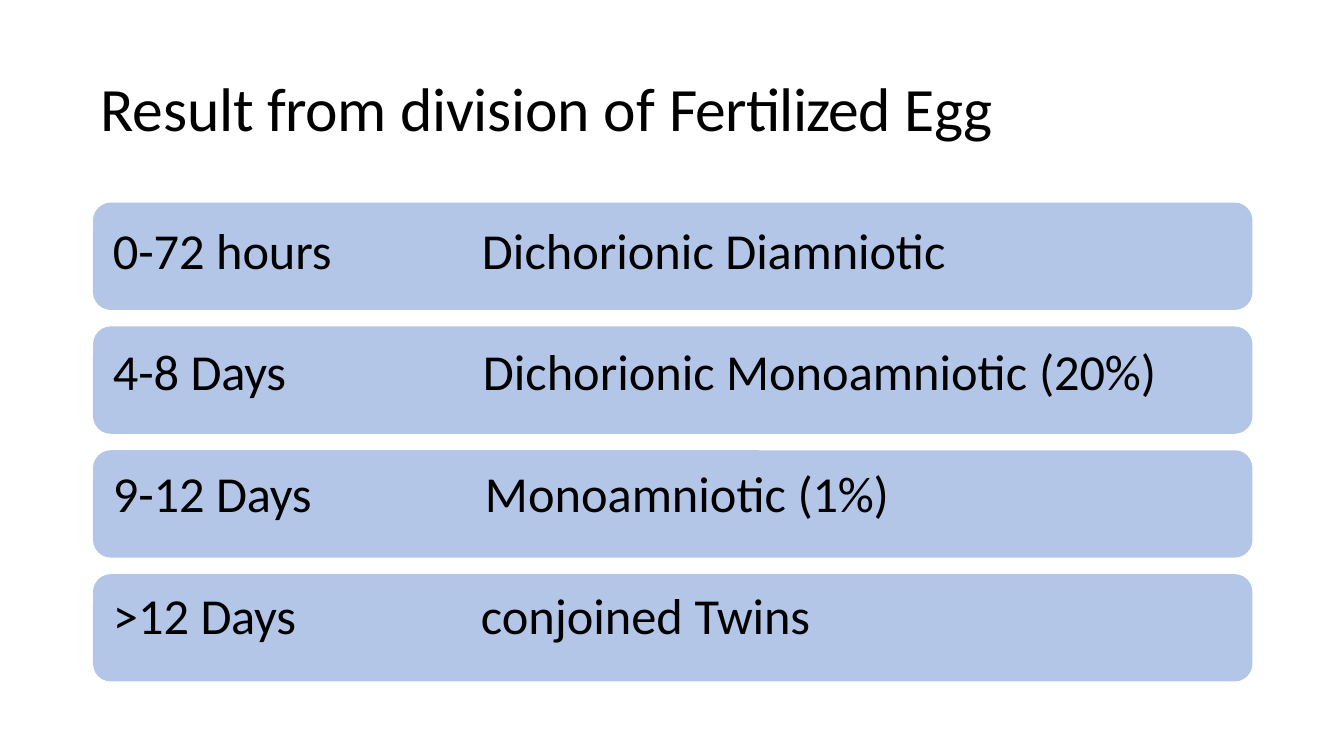
from dataclasses import dataclass

from lxml.etree import SubElement
from pptx import Presentation
from pptx.dml.color import RGBColor
from pptx.enum.shapes import MSO_SHAPE as Preset
from pptx.enum.text import MSO_ANCHOR as Anchor
from pptx.oxml.ns import qn
from pptx.util import Inches, Length, Pt

SLIDE_WIDTH, SLIDE_HEIGHT = Inches(13.33), Inches(7.5)


@dataclass(frozen=True)
class Theme:
    font: str = "Calibri"
    text: RGBColor = RGBColor(0x00, 0x00, 0x00)
    bar: RGBColor = RGBColor(0xB4, 0xC6, 0xE7)
    title_size: Length = Pt(44)
    row_size: Length = Pt(36)


@dataclass(frozen=True)
class Area:
    """Left, top, width and height in percent of the slide's size."""
    left: float
    top: float
    width: float
    height: float

    def lengths(self) -> tuple[int, int, int, int]:
        return (int(SLIDE_WIDTH * self.left / 100), int(SLIDE_HEIGHT * self.top / 100),
                int(SLIDE_WIDTH * self.width / 100), int(SLIDE_HEIGHT * self.height / 100))


@dataclass(frozen=True)
class Span:
    text: str
    spacing: float = 0  # points between letters


@dataclass(frozen=True)
class Stage:
    tab: float  # percent of the slide's width
    spans: tuple[Span, ...]


THEME = Theme()
TITLE_AREA = Area(7.5, 4.53, 81.47, 18.93)
FIRST_BAR = Area(6.92, 26.8, 86.27, 14.2)
BAR_PITCH = 16.38
STAGE_AREA = Area(8.33, 28.8, 77.87, 57.6)
STAGE_GAP = Pt(43.7)

TITLE = (Span("Result ", -0.2), Span("from ", -0.4), Span("division ", -0.2),
         Span("of "), Span("Fertilized ", -0.5), Span("Egg", -0.2))
STAGES = (
    Stage(27.46, (Span("0-", -0.1), Span("72 "), Span("hours", -0.1),
                  Span("\tDichorionic "), Span("Diamniotic", -0.1))),
    Stage(27.53, (Span("4-", -0.1), Span("8 "), Span("Days", -0.2),
                  Span("\tDichorionic Monoamniotic "), Span("(20%)", -0.1))),
    Stage(27.68, (Span("9-", -0.1), Span("12 "), Span("Days", -0.2),
                  Span("\tMonoamniotic "), Span("(1%)", -0.2))),
    Stage(27.38, (Span(">12 "), Span("Days", -0.2),
                  Span("\tconjoined "), Span("Twins", -0.1))),
)


def add_text_frame(slide, area: Area, top_inset: Length):
    frame = slide.shapes.add_textbox(*area.lengths()).text_frame
    frame.word_wrap = True
    frame.vertical_anchor = Anchor.TOP
    frame.margin_left = frame.margin_right = frame.margin_bottom = 0
    frame.margin_top = top_inset
    return frame


def add_spans(paragraph, spans: tuple[Span, ...], size: Length) -> None:
    for span in spans:
        run = paragraph.add_run()
        run.text = span.text
        run.font.name = THEME.font
        run.font.size = size
        run.font.color.rgb = THEME.text
        run.font._element.set("spc", str(round(span.spacing * 100)))


def set_indent_and_tab(paragraph, tab: float) -> None:
    properties = paragraph._p.get_or_add_pPr()
    properties.set("marL", str(Inches(0.01)))
    tabs = SubElement(properties, qn("a:tabLst"))
    SubElement(tabs, qn("a:tab"), pos=str(int(SLIDE_WIDTH * tab / 100)), algn="l")


def add_bar(slide, index: int) -> None:
    area = Area(FIRST_BAR.left, FIRST_BAR.top + index * BAR_PITCH,
                FIRST_BAR.width, FIRST_BAR.height)
    bar = slide.shapes.add_shape(Preset.ROUNDED_RECTANGLE, *area.lengths())
    bar.shadow.inherit = False
    bar.fill.solid()
    bar.fill.fore_color.rgb = THEME.bar
    bar.line.fill.background()


def main() -> None:
    presentation = Presentation()
    presentation.slide_width, presentation.slide_height = SLIDE_WIDTH, SLIDE_HEIGHT
    slide = presentation.slides.add_slide(presentation.slide_layouts[6])

    # Title
    title = add_text_frame(slide, TITLE_AREA, Inches(0.35)).paragraphs[0]
    title.space_before = Pt(1.3)
    add_spans(title, TITLE, THEME.title_size)

    # Bars behind the stages
    for index in range(len(STAGES)):
        add_bar(slide, index)

    # Time of division and its result, one paragraph per bar
    frame = add_text_frame(slide, STAGE_AREA, Inches(0.01))
    for index, stage in enumerate(STAGES):
        paragraph = frame.add_paragraph() if index else frame.paragraphs[0]
        paragraph.space_before = STAGE_GAP if index else Pt(1.1)
        set_indent_and_tab(paragraph, stage.tab)
        add_spans(paragraph, stage.spans, THEME.row_size)

    presentation.save("out.pptx")


if __name__ == "__main__":
    main()
